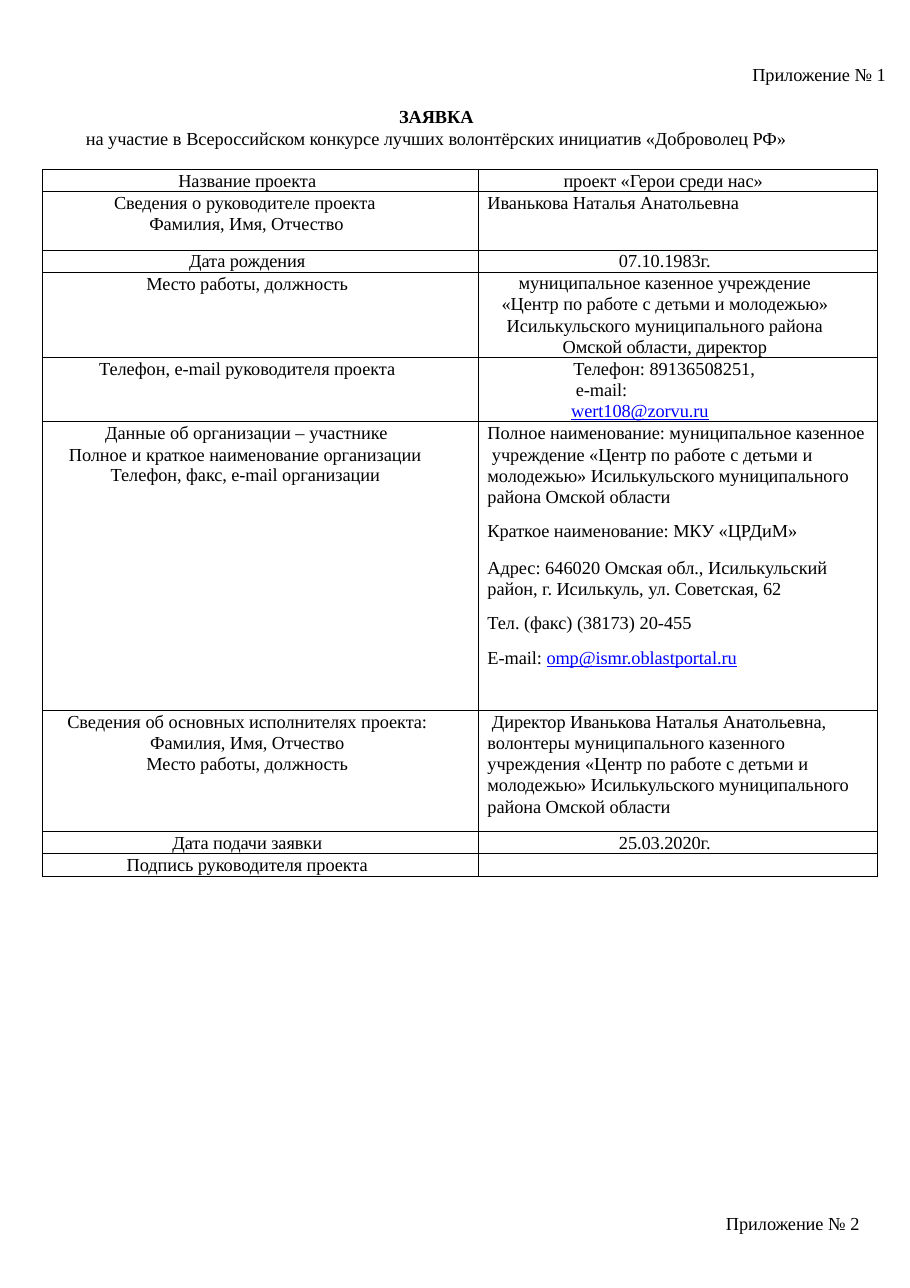
from dataclasses import dataclass

from lxml import etree
from pptx import Presentation
from pptx import util as u
from pptx.dml.color import RGBColor
from pptx.enum import text
from pptx.oxml.ns import qn

PAGE_W, PAGE_H = u.Inches(8.26), u.Inches(11.69)
COLORS = {"ink": "000000", "link": "0000FF"}
FONT = "Times New Roman"
LEFT, CENTER, RIGHT = text.PP_ALIGN.LEFT, text.PP_ALIGN.CENTER, text.PP_ALIGN.RIGHT


@dataclass
class Para:
    """Paragraph: margins in inches, spacing in points.

    In wording, every second piece between bars has normal letter spacing,
    the others are slightly condensed; a new line is a line break.
    """
    wording: str
    align: int = LEFT
    left: float = 0
    first: float = 0
    right: float = 0
    pitch: float = 0
    before: float = 0
    bold: bool = False


def centered(wording, pitch=13.3, left=0, right=0.24):
    return Para(wording, CENTER, left=left, right=right, pitch=pitch)


def detail(wording, before=0, pitch=13.8, first=0):
    return Para(wording, left=0.08, first=first, pitch=pitch, before=before)


APPLICATION = [  # row height in percent of the page, label, answer
    (1.71, [centered("Название проекта")],
     [Para("проект «Герои среди нас»", left=0.77, pitch=13.3)]),
    (4.53, [Para("Сведения |о |руководителе проекта\nФамилия, Имя, Отчество",
                 left=0.97, first=-0.32, pitch=13.8, before=0.4)],
     [detail("Иванькова Наталья Анатольевна")]),
    (1.71, [centered("Дата рождения")], [centered("07.10.1983г.")]),
    (6.59, [centered("Место работы, должность", 13.8)],
     [centered("муниципальное казенное учреждение", 13.6),
      centered("«Центр по работе |с |детьми |и |молодежью»\n"
               "Исилькульского муниципального района\n"
               "Омской области, директор", 13.8, left=0.19, right=0.43)]),
    (4.96, [centered("Телефон, e-mail руководителя проекта", 13.8)],
     [Para("Телефон: |89136508251,\n |e-mail:\n||wert108@zorvu.ru",
           left=0.84, first=0.02, pitch=13.8)]),
    (22.41, [Para("Данные |об |организации |– |участнике\nПолное |и |"
                  "краткое наименование организации",
                  left=0.24, first=0.33, pitch=13.8, before=0.4),
             Para("Телефон, факс, e-mail организации", left=0.62, pitch=13.4)],
     [detail("Полное наименование: муниципальное казенное\n"
             " учреждение «Центр по работе |с |детьми |и\n|"
             "молодежью» Исилькульского муниципального\n"
             "района Омской области", 0.4),
      detail("Краткое наименование: МКУ «ЦРДиМ»", 9.1, pitch=0),
      detail("Адрес: |646020 |Омская |обл., |Исилькульский\n"
             "район, г. Исилькуль, |ул. |Советская, |62", 10.3),
      detail("Тел. (факс) |(38173) 20-455", 9.1, pitch=0),
      detail("E-mail: ||omp@ismr.oblastportal.ru", 9.4, pitch=0)]),
    (9.41, [centered("Сведения |об |основных исполнителях проекта:\n"
                     "Фамилия, Имя, Отчество", 13.8, left=0.21, right=0.45),
            centered("Место работы, должность", 13.4)],
     [detail("Директор Иванькова Наталья Анатольевна,\n"
             "волонтеры муниципального казенного\n"
             "учреждения «Центр по работе |с |детьми |и\n|"
             "молодежью» Исилькульского муниципального\n"
             "района Омской области", 0.4, first=0.04)]),
    (1.71, [centered("Дата подачи заявки")], [centered("25.03.2020г.")]),
    (1.71, [centered("Подпись руководителя проекта")], [centered("")]),
]


def across(percent):
    return round(PAGE_W * percent / 100)


def down(percent):
    return round(PAGE_H * percent / 100)


def add_run(paragraph, wording, condensed, bold):
    run = paragraph.add_run()
    run.text = wording
    is_link = "@" in wording
    font = run.font
    font.name, font.size, font.bold = FONT, u.Pt(12), bold
    font.underline = is_link
    font.color.rgb = RGBColor.from_string(COLORS["link" if is_link else "ink"])
    if condensed:
        run._r.get_or_add_rPr().set("spc", "-5")


def write_paragraph(paragraph, para):
    paragraph.alignment = para.align
    if para.pitch:
        paragraph.line_spacing = u.Pt(para.pitch)
    paragraph.space_before = u.Pt(para.before)
    properties = paragraph._p.get_or_add_pPr()
    for name, inches in (("marL", para.left), ("marR", para.right), ("indent", para.first)):
        properties.set(name, str(u.Inches(inches)))
    for index, piece in enumerate(para.wording.split("|")):
        for number, line in enumerate(piece.split("\n")):
            if number:
                paragraph.add_line_break()
            if line:
                add_run(paragraph, line, index % 2 == 0, para.bold)
    if not para.wording:
        etree.SubElement(paragraph._p, qn("a:endParaRPr"), sz="1200")


def write_text(frame, paras):
    for index, para in enumerate(paras):
        write_paragraph(frame.add_paragraph() if index else frame.paragraphs[0], para)


def set_margins(holder):
    holder.margin_left = holder.margin_right = holder.margin_bottom = 0
    holder.margin_top = u.Inches(0.01)


def add_note(slide, left, top, width, height, paras):
    frame = slide.shapes.add_textbox(
        across(left), down(top), across(width), down(height)).text_frame
    frame.word_wrap = True
    set_margins(frame)
    write_text(frame, paras)


def outline_cell(cell):
    properties = cell._tc.get_or_add_tcPr()
    for side in ("lnL", "lnR", "lnT", "lnB"):
        line = etree.SubElement(properties, qn("a:" + side), w=str(u.Pt(0.5)))
        fill = etree.SubElement(line, qn("a:solidFill"))
        etree.SubElement(fill, qn("a:srgbClr"), val=COLORS["ink"])
    cell.fill.background()


def add_application_table(slide, left, top, widths):
    heights = [row[0] for row in APPLICATION]
    table = slide.shapes.add_table(
        len(heights), len(widths), across(left), down(top),
        across(sum(widths)), down(sum(heights))).table
    table.first_row = table.horz_banding = False
    for column, width in zip(table.columns, widths):
        column.width = across(width)
    for row, (height, *contents) in zip(table.rows, APPLICATION):
        row.height = down(height)
        for cell, paras in zip(row.cells, contents):
            set_margins(cell)
            outline_cell(cell)
            write_text(cell.text_frame, paras)


def main():
    deck = Presentation()
    deck.slide_width, deck.slide_height = PAGE_W, PAGE_H
    slide = deck.slides.add_slide(deck.slide_layouts[6])
    add_note(slide, 8.72, 4.79, 88.62, 6.84, [
        Para("Приложение |№ 1", RIGHT, before=1),
        Para("ЗАЯВКА", CENTER, right=0.84, pitch=14.1, before=13.8, bold=True),
        Para("на участие |в |Всероссийском конкурсе лучших волонтёрских "
             "инициатив «Доброволец РФ»", CENTER, right=0.84, pitch=14.1),
    ])
    add_application_table(slide, 4.66, 13.17, [47.94, 43.83])
    add_note(slide, 79.66, 94.01, 18, 1.97, [Para("Приложение |№ 2", left=0.01, before=1)])
    deck.save("out.pptx")


if __name__ == "__main__":
    main()
